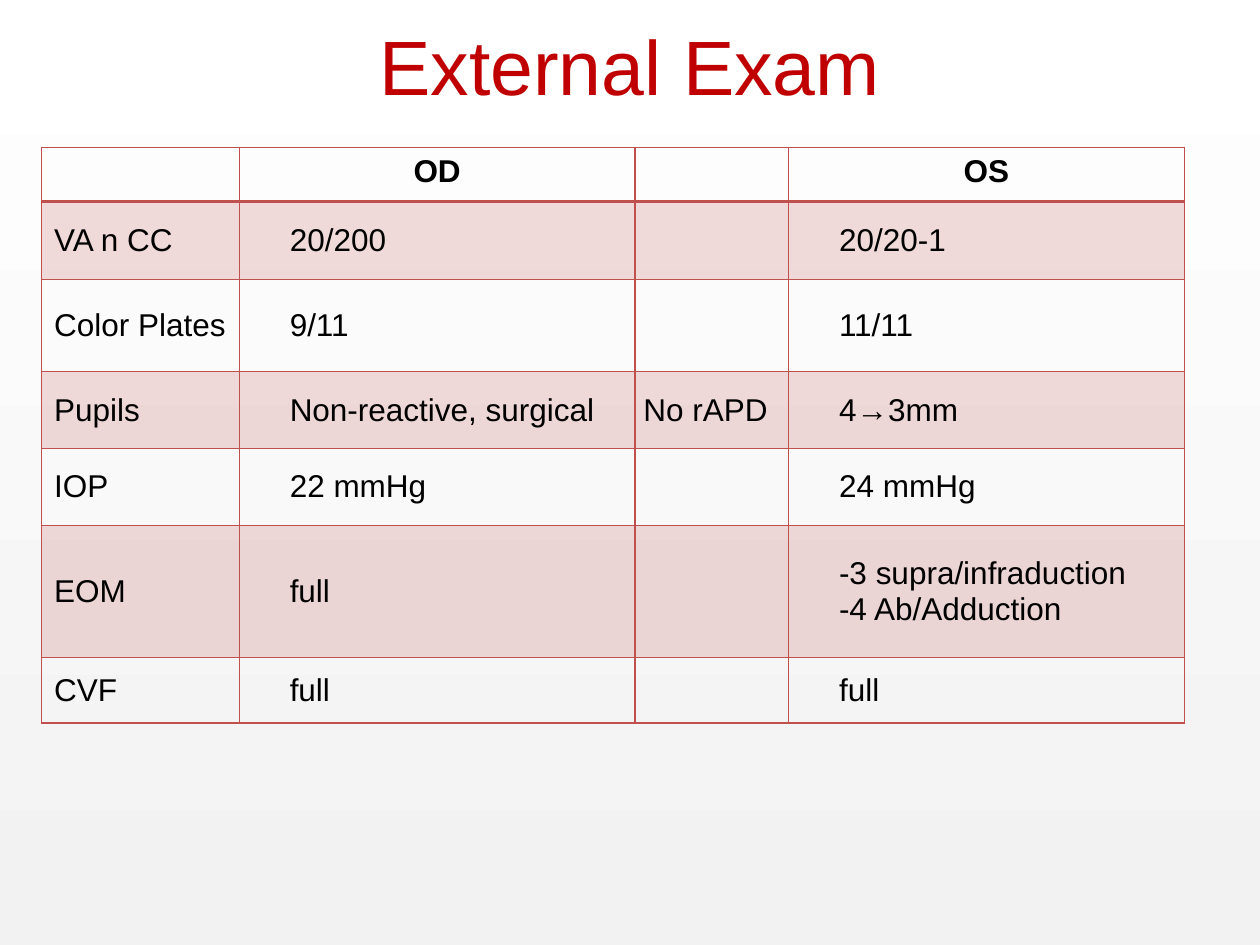
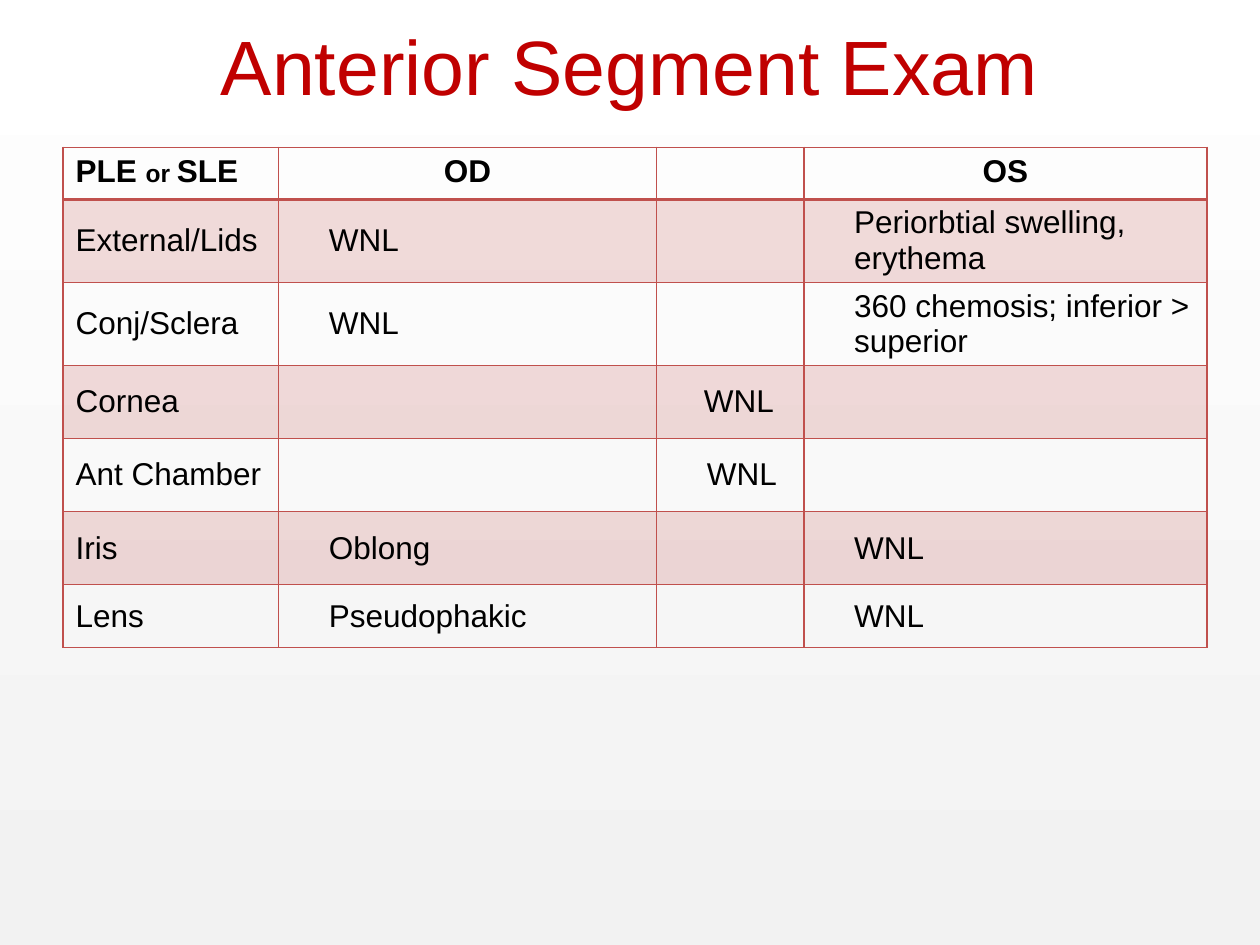
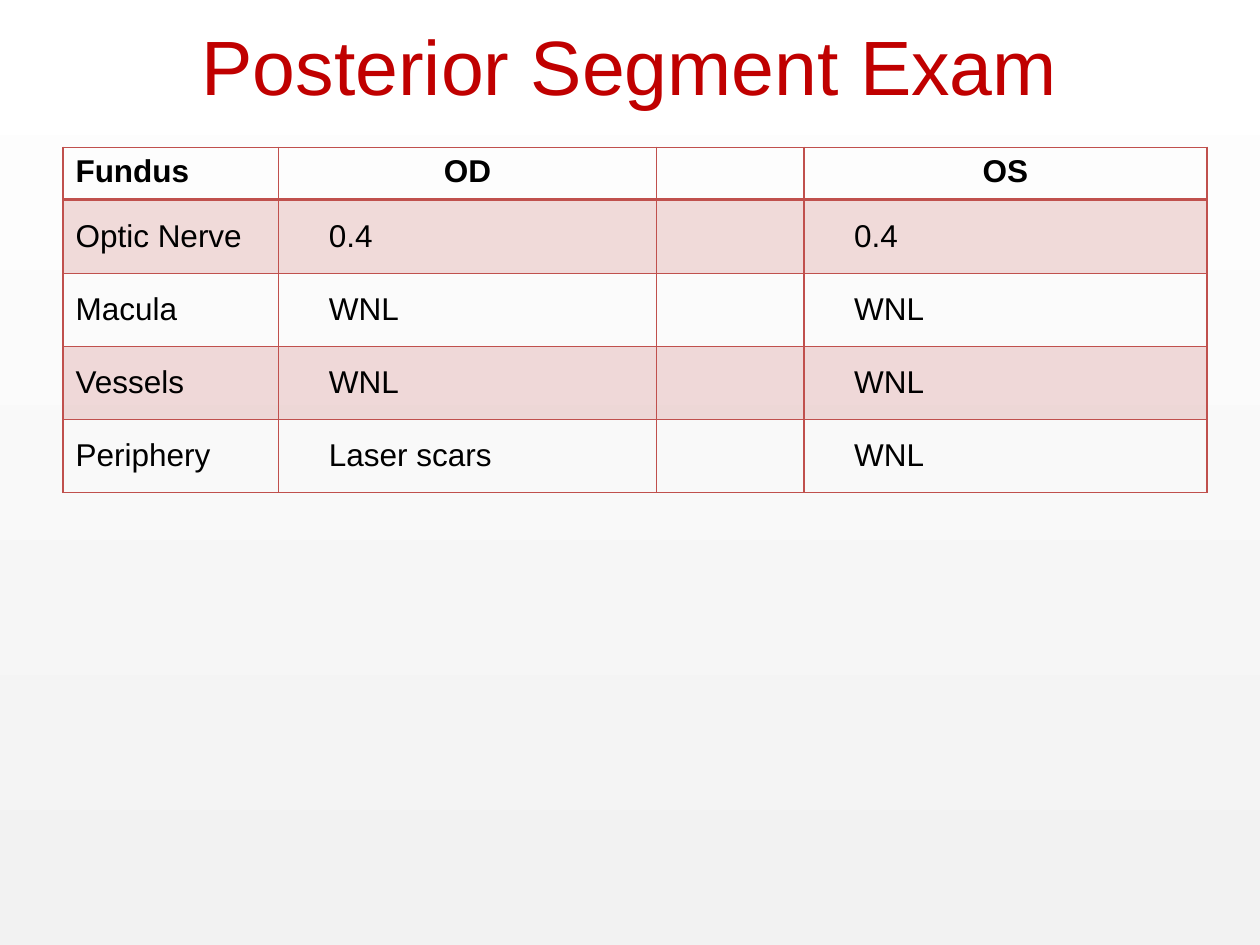
from lxml import etree
from pptx import Presentation
from pptx.dml.color import RGBColor
from pptx.enum.text import MSO_ANCHOR, PP_ALIGN
from pptx.oxml.ns import qn
from pptx.util import Inches, Pt

LEFT, CENTER = PP_ALIGN.LEFT, PP_ALIGN.CENTER
TOP, MIDDLE = MSO_ANCHOR.TOP, MSO_ANCHOR.MIDDLE
TITLE_ONLY = 5

RED, TITLE_RED, BLACK = "C0504D", "C00000", "000000"
BACKDROP = ("F2F2F2", "FFFFFF")
BAND_ALPHA = "20000"
TABLE_TOP = 1.17
TITLE_FRAME = {"left": 0.5, "top": -0.11, "width": 9, "height": 1.25}
TITLE_FONT = {"name": "Arial", "size": Pt(44), "bold": False}
CELL_FONT = {"name": "Arial", "size": Pt(18)}
LABEL_INSETS, VALUE_INSETS = (0.1, 0.1), (0.4, 0.1)
SEGMENT_COLUMNS = (1.71, 3, 1.17, 3.2)

# Findings shared by both eyes: row label -> alignment, (left, right) insets
BOTH_EYES = {
    "Pupils": (CENTER, (0, 0.1)),
    "Cornea": (CENTER, (0.14, 0)),
    "Ant Chamber": (LEFT, (0.4, 0)),
}

EXAMS = [
    {
        "title": "External Exam",
        "left": 0.33,
        "columns": (1.57, 3.14, 1.22, 3.14),
        "heights": (0.43, 0.62, 0.73, 0.61, 0.61, 1.05, 0.52),
        "rows": [
            ("", "OD", "", "OS"),
            ("VA n CC", "20/200", "", "20/20-1"),
            ("Color Plates", "9/11", "", "11/11"),
            ("Pupils", "Non-reactive, surgical", "No rAPD", "4→3mm"),
            ("IOP", "22 mmHg", "", "24 mmHg"),
            ("EOM", "full", "", "-3 supra/infraduction\n-4 Ab/Adduction"),
            ("CVF", "full", "", "full"),
        ],
    },
    {
        "title": "Anterior Segment Exam",
        "left": 0.5,
        "columns": SEGMENT_COLUMNS,
        "heights": (0.41, 0.59, 0.58, 0.58, 0.58, 0.58, 0.5),
        "rows": [
            ((("PLE ", 18), ("or ", 14), ("SLE", 18)), "OD", "", "OS"),
            ("External/Lids", "WNL", "", "Periorbtial swelling, erythema"),
            ("Conj/Sclera", "WNL", "", "360 chemosis; inferior > superior"),
            ("Cornea", "", "WNL", ""),
            ("Ant Chamber", "", "WNL", ""),
            ("Iris", "Oblong", "", "WNL"),
            ("Lens", "Pseudophakic", "", "WNL"),
        ],
    },
    {
        "title": "Posterior Segment Exam",
        "left": 0.5,
        "columns": SEGMENT_COLUMNS,
        "heights": (0.41, 0.59, 0.58, 0.58, 0.58),
        "rows": [
            ("Fundus", "OD", "", "OS"),
            ("Optic Nerve", "0.4", "", "0.4"),
            ("Macula", "WNL", "", "WNL"),
            ("Vessels", "WNL", "", "WNL"),
            ("Periphery", "Laser scars", "", "WNL"),
        ],
    },
]


def style_font(font, color, formats):
    font.color.rgb = RGBColor.from_string(color)
    for attribute, value in formats.items():
        setattr(font, attribute, value)


def style_cell(cell, banded, widths):
    """Draw borders (points per side, in schema order) and the red tint."""
    properties = cell._tc.get_or_add_tcPr()
    for side, width in widths.items():
        border = etree.SubElement(properties, qn(f"a:ln{side}"), w=str(Pt(width)))
        paint = etree.SubElement(border, qn("a:solidFill"))
        etree.SubElement(paint, qn("a:srgbClr"), val=RED)
    if not banded:
        cell.fill.background()
        return
    cell.fill.solid()
    cell.fill.fore_color.rgb = RGBColor.from_string(RED)
    tint = properties.find(f"{qn('a:solidFill')}/{qn('a:srgbClr')}")
    etree.SubElement(tint, qn("a:alpha"), val=BAND_ALPHA)


prs = Presentation()
prs.slide_width, prs.slide_height = Inches(10), Inches(7.5)

backdrop = prs.slide_master.background.fill
backdrop.gradient()
backdrop.gradient_angle = 90
for stop, color in zip(backdrop.gradient_stops, BACKDROP):
    stop.color.rgb = RGBColor.from_string(color)

for exam in EXAMS:
    slide = prs.slides.add_slide(prs.slide_layouts[TITLE_ONLY])
    title = slide.shapes.title
    for attribute, length in TITLE_FRAME.items():
        setattr(title, attribute, Inches(length))
    title.text_frame.text = exam["title"]
    title.text_frame.vertical_anchor = MIDDLE
    heading = title.text_frame.paragraphs[0]
    heading.alignment = CENTER
    style_font(heading.runs[0].font, TITLE_RED, TITLE_FONT)

    rows, columns, heights = exam["rows"], exam["columns"], exam["heights"]
    findings = slide.shapes.add_table(
        len(rows), len(columns), Inches(exam["left"]), Inches(TABLE_TOP),
        Inches(sum(columns)), Inches(sum(heights))).table
    findings.first_row = findings.horz_banding = False
    for column, width in zip(findings.columns, columns):
        column.width = Inches(width)

    for r, (texts, height) in enumerate(zip(rows, heights)):
        findings.rows[r].height = Inches(height)
        header = r == 0
        for c, text in enumerate(texts):
            cell = findings.cell(r, c)
            alignment, insets = LEFT, VALUE_INSETS if c else LABEL_INSETS
            if header:
                alignment, insets = CENTER if c else LEFT, LABEL_INSETS
            elif c == 2:
                alignment, insets = BOTH_EYES.get(texts[0], (LEFT, LABEL_INSETS))
            cell.margin_left, cell.margin_right = map(Inches, insets)
            cell.vertical_anchor = TOP if header else MIDDLE
            style_cell(cell, r % 2 == 1, {
                "L": 1, "R": 1, "T": 2 if r == 1 else 1, "B": 2 if header else 1})

            if isinstance(text, str):
                cell.text_frame.text = text
                sizes = None
            else:
                for part, size in text:
                    cell.text_frame.paragraphs[0].add_run().text = part
                sizes = [Pt(size) for part, size in text]
            for paragraph in cell.text_frame.paragraphs:
                paragraph.alignment = alignment
                for i, run in enumerate(paragraph.runs):
                    style_font(run.font, BLACK, {**CELL_FONT, "bold": header})
                    if sizes:
                        run.font.size = sizes[i]

prs.save("out.pptx")
